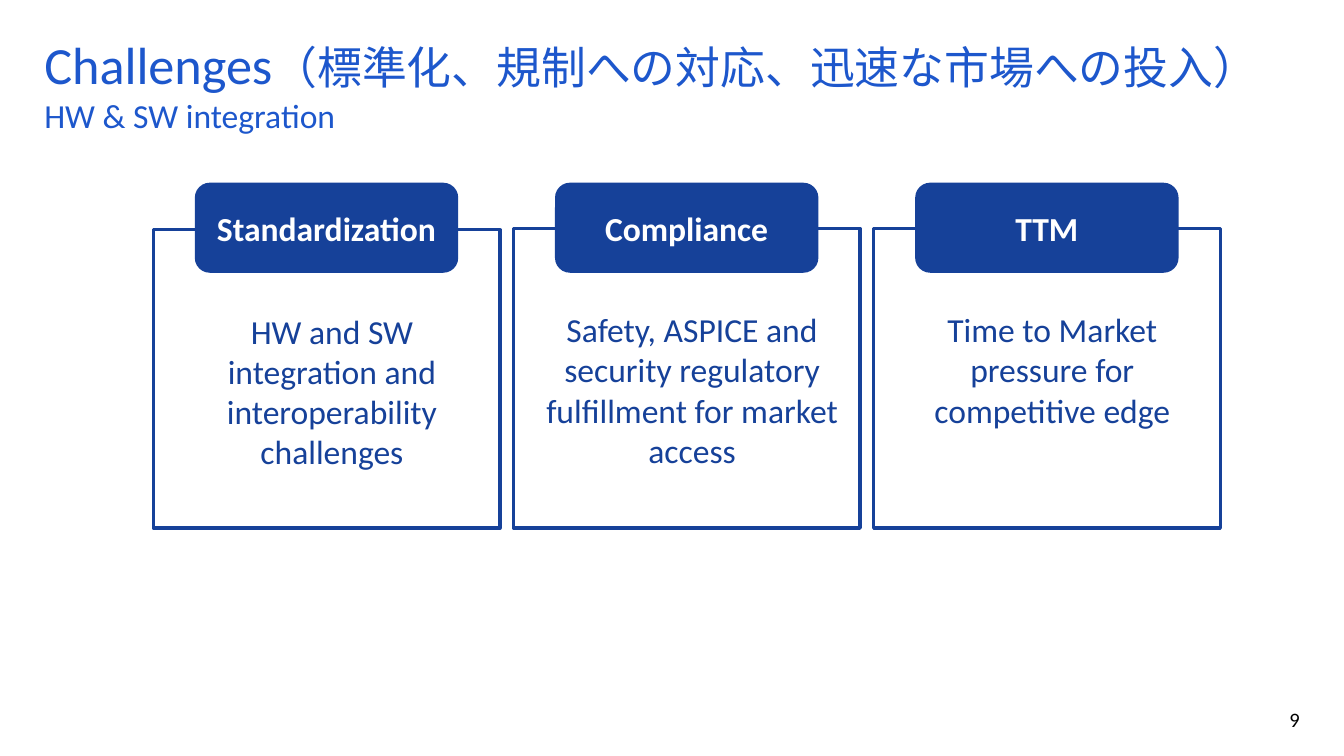
"""Build the slide of three framed challenges in hardware and software integration."""
from dataclasses import dataclass

from pptx import Presentation
from pptx.dml.color import RGBColor
from pptx.enum.shapes import MSO_SHAPE
from pptx.enum.text import MSO_ANCHOR, MSO_AUTO_SIZE, PP_ALIGN
from pptx.shapes.autoshape import Shape
from pptx.slide import Slide
from pptx.text.text import TextFrame
from pptx.util import Inches, Pt

RECTANGLE, ROUNDED = MSO_SHAPE.RECTANGLE, MSO_SHAPE.ROUNDED_RECTANGLE
TOP, MIDDLE = MSO_ANCHOR.TOP, MSO_ANCHOR.MIDDLE
LEFT, CENTER, RIGHT = PP_ALIGN.LEFT, PP_ALIGN.CENTER, PP_ALIGN.RIGHT
NO_AUTOFIT = MSO_AUTO_SIZE.NONE


@dataclass(frozen=True)
class Theme:
    """Colours, font and type sizes of the slide."""
    font: str = "Calibri"
    title: str = "1D57CC"
    navy: str = "164199"
    white: str = "FFFFFF"
    black: str = "000000"
    title_size: int = 28
    translation_size: int = 24
    body_size: int = 18
    number_size: int = 11
    border: float = 1.75


@dataclass(frozen=True)
class Challenge:
    """A heading with its text and the top of its frame in inches."""
    heading: str
    text: str
    top: float = 1.7


THEME = Theme()
CHALLENGES = (
    Challenge("Standardization", "HW and SW integration and interoperability challenges", 1.71),
    Challenge("Compliance", "Safety, ASPICE and security regulatory fulfillment for market access"),
    Challenge("TTM", "Time to Market pressure for competitive edge"),
)
SLIDE_WIDTH = 10
SLIDE_HEIGHT = SLIDE_WIDTH * 9 / 16
FIRST_LEFT, PITCH = 1.14, 2.68
FRAME_WIDTH, FRAME_BOTTOM = 2.58, 3.93
TAB_TOP, TAB_WIDTH, TAB_HEIGHT = 1.36, 1.96, 0.67
FRAME_INSETS = {
    "margin_left": Inches(0.2),
    "margin_top": Inches(0.6),
    "margin_right": Inches(0.12),
    "margin_bottom": Inches(0.12),
}


def apply_format(target: object, values: dict) -> None:
    """Set every attribute named in the values."""
    for name, value in values.items():
        setattr(target, name, value)


def add_run(paragraph, text: str, size: float, color: str, bold: bool = False) -> None:
    """Append a formatted run to a paragraph."""
    run = paragraph.add_run()
    run.text = text
    apply_format(run.font, {"name": THEME.font, "size": Pt(size), "bold": bold})
    run.font.color.rgb = RGBColor.from_string(color)


def format_frame(frame: TextFrame, anchor: MSO_ANCHOR, alignment: PP_ALIGN, **insets: int) -> None:
    """Set wrapping, anchor, insets and first paragraph alignment."""
    apply_format(frame, {"auto_size": NO_AUTOFIT, "word_wrap": True, "vertical_anchor": anchor, **insets})
    frame.paragraphs[0].alignment = alignment


def add_box(slide: Slide, kind: MSO_SHAPE, left: float, top: float, width: float, height: float) -> Shape:
    """Add a shape without shadow."""
    shape = slide.shapes.add_shape(kind, Inches(left), Inches(top), Inches(width), Inches(height))
    shape.shadow.inherit = False
    return shape


def add_frame(slide: Slide, challenge: Challenge, left: float) -> None:
    """Draw the outlined box with the challenge text."""
    shape = add_box(slide, RECTANGLE, left, challenge.top, FRAME_WIDTH, FRAME_BOTTOM - challenge.top)
    shape.fill.background()
    shape.line.color.rgb = RGBColor.from_string(THEME.navy)
    shape.line.width = Pt(THEME.border)
    format_frame(shape.text_frame, TOP, CENTER, **FRAME_INSETS)
    add_run(shape.text_frame.paragraphs[0], challenge.text, THEME.body_size, THEME.navy)


def add_tab(slide: Slide, challenge: Challenge, left: float) -> None:
    """Draw the filled heading centred over its frame."""
    tab_left = left + (FRAME_WIDTH - TAB_WIDTH) / 2
    shape = add_box(slide, ROUNDED, tab_left, TAB_TOP, TAB_WIDTH, TAB_HEIGHT)
    shape.fill.solid()
    shape.fill.fore_color.rgb = RGBColor.from_string(THEME.navy)
    shape.line.fill.background()
    format_frame(shape.text_frame, MIDDLE, CENTER)
    add_run(shape.text_frame.paragraphs[0], challenge.heading, THEME.body_size, THEME.white, True)


def write_title(slide: Slide) -> None:
    """Place and fill the title placeholder."""
    title = slide.shapes.title
    apply_format(title, {"left": Inches(0.23), "top": Inches(0.19),
                         "width": Inches(9.54), "height": Inches(0.44)})
    format_frame(title.text_frame, TOP, LEFT)
    paragraph = title.text_frame.paragraphs[0]
    add_run(paragraph, "Challenges", THEME.title_size, THEME.title)
    add_run(paragraph, "（標準化、規制への対応、迅速な市場への投入）", THEME.translation_size, THEME.title)
    paragraph.add_line_break()
    add_run(paragraph, "HW & SW integration", THEME.body_size, THEME.title)


def add_page_number(slide: Slide, number: int) -> None:
    """Write the page number at the lower right."""
    box = slide.shapes.add_textbox(Inches(7.44), Inches(5.21), Inches(2.33), Inches(0.3))
    format_frame(box.text_frame, TOP, RIGHT)
    add_run(box.text_frame.paragraphs[0], str(number), THEME.number_size, THEME.black)


def main() -> None:
    """Build and save the presentation."""
    presentation = Presentation()
    apply_format(presentation, {"slide_width": Inches(SLIDE_WIDTH), "slide_height": Inches(SLIDE_HEIGHT)})
    slide = presentation.slides.add_slide(presentation.slide_layouts[5])
    write_title(slide)
    for draw in (add_frame, add_tab):
        for index, challenge in enumerate(CHALLENGES):
            draw(slide, challenge, FIRST_LEFT + index * PITCH)
    add_page_number(slide, 9)
    presentation.save("out.pptx")


if __name__ == "__main__":
    main()
